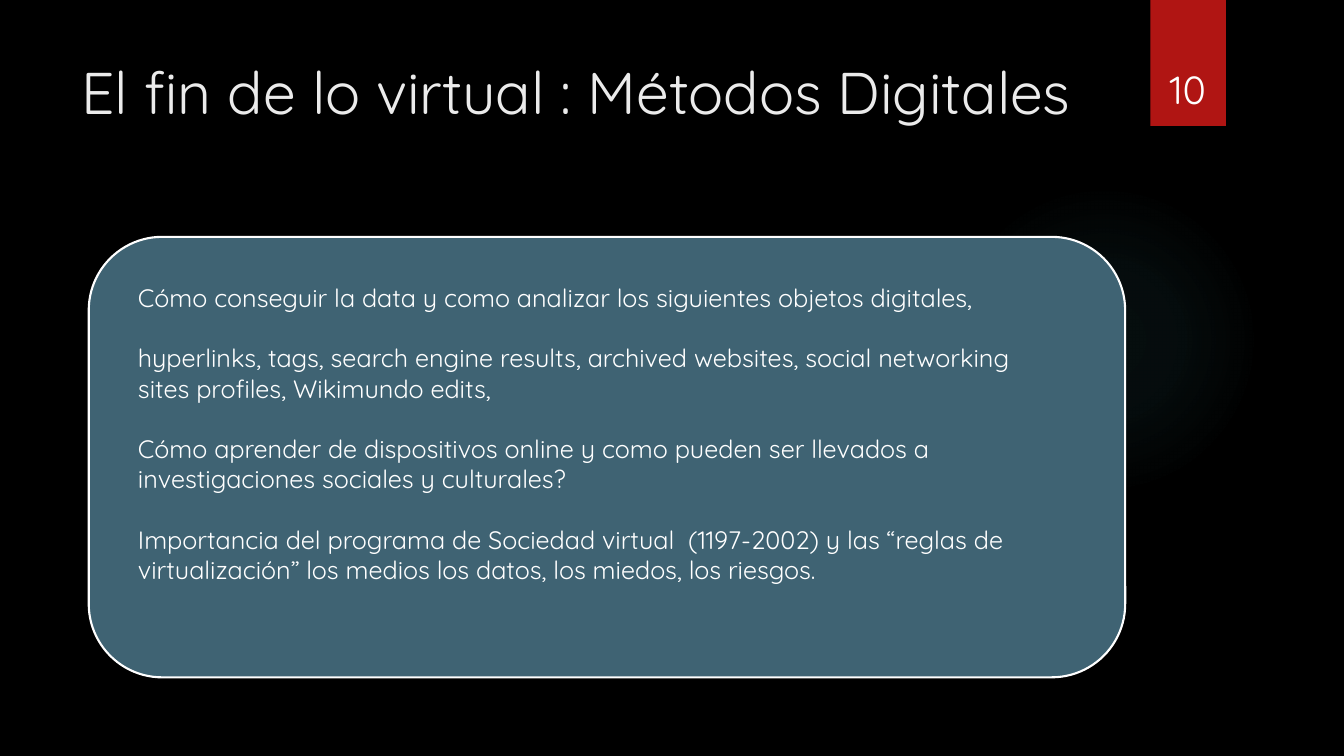
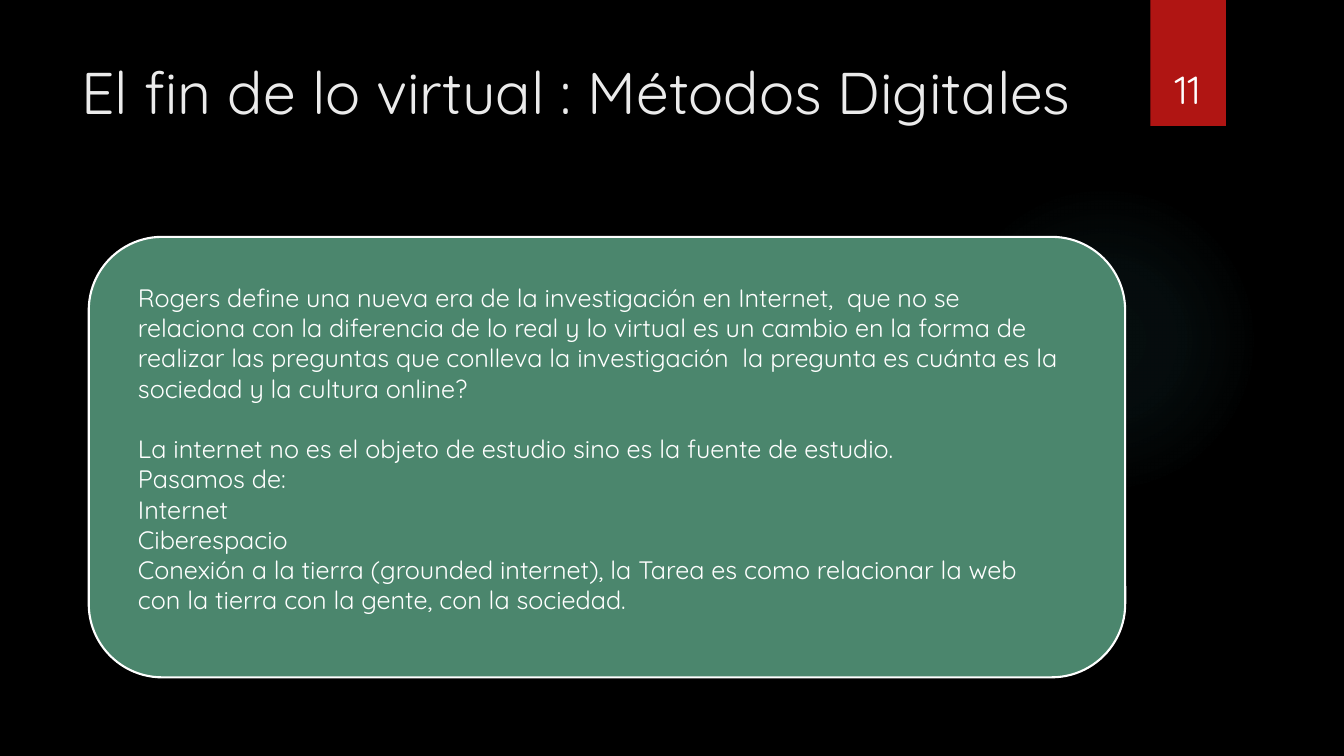
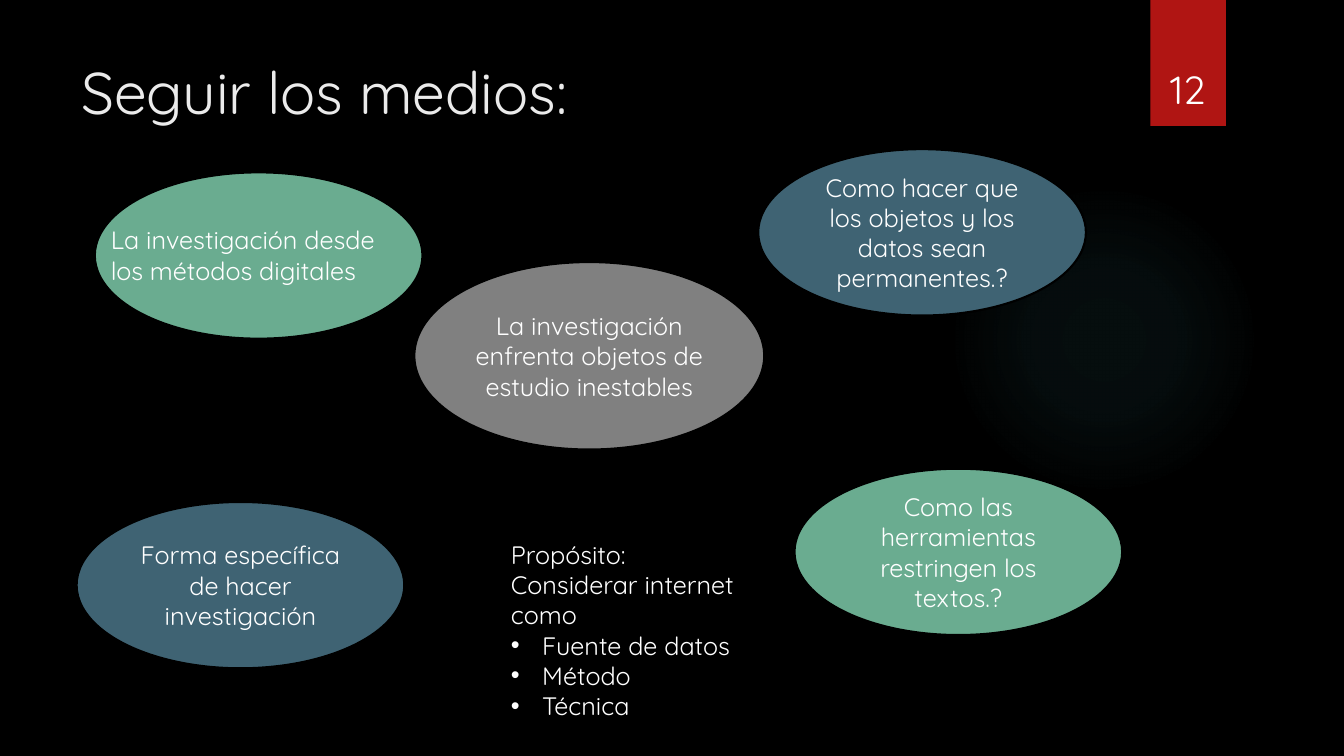
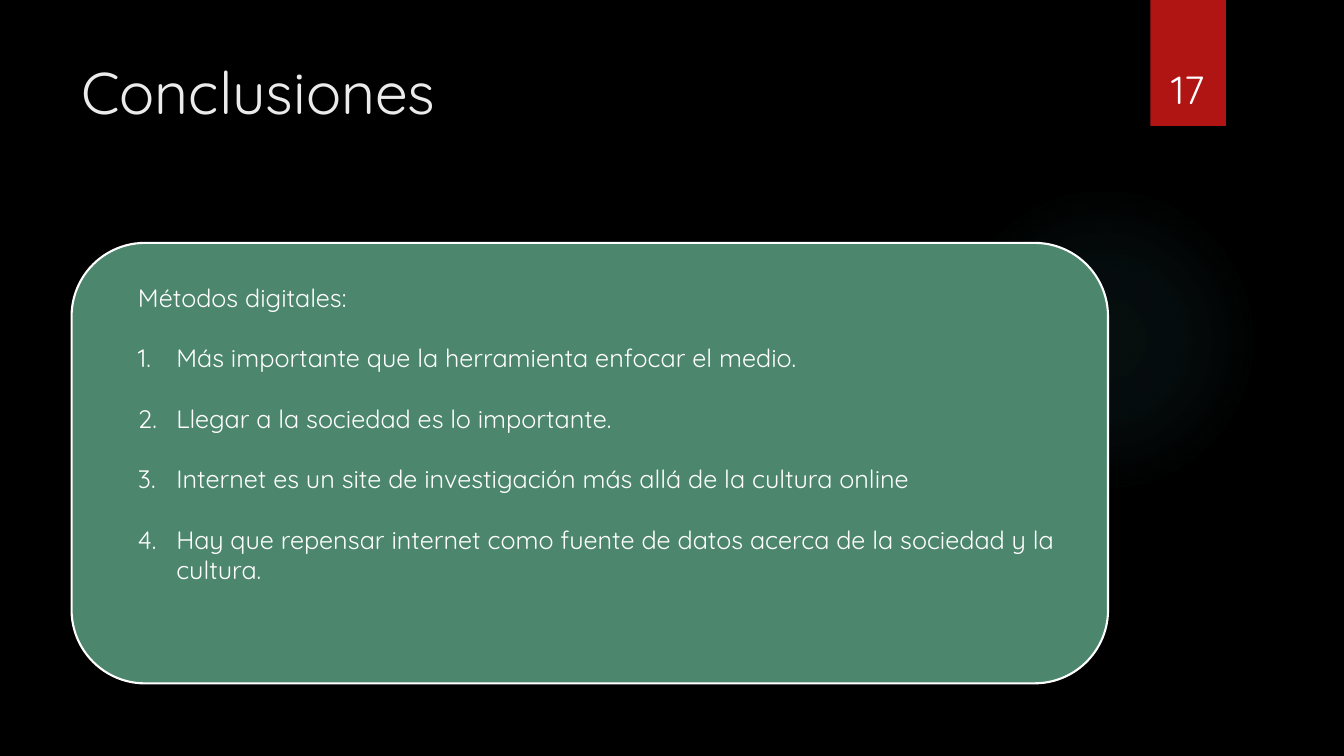
from dataclasses import dataclass

import lxml.etree
import pptx
import pptx.dml.color
import pptx.enum.shapes
import pptx.enum.text
import pptx.oxml
import pptx.oxml.ns
import pptx.util

Inches = pptx.util.Inches
Pt = pptx.util.Pt
SHAPE = pptx.enum.shapes.MSO_SHAPE
ALIGN = pptx.enum.text.PP_ALIGN
ANCHOR = pptx.enum.text.MSO_ANCHOR


@dataclass(frozen=True)
class Theme:
    font: str = "Quicksand"
    background: str = "000000"
    title: str = "EBEBEB"
    text: str = "FFFFFF"
    band: str = "B01513"
    glow: str = "50B9C1"
    blue: str = "3F6373"
    green: str = "4B866D"
    mint: str = "6AAC90"
    gray: str = "808080"
    title_size: float = 42
    number_size: float = 28
    body_size: float = 18
    outline_width: float = 1.5
    body_gap: float = 21.6
    glow_stops: tuple = ((0, 7), (36, 6), (69, 0))


THEME = Theme()


@dataclass(frozen=True)
class Paragraph:
    """Text with its space before in points, its marker and its hanging indent in inches."""
    text: str
    gap: float = 0
    marker: str = ""
    indent: float = 0


def spaced(text, marker="", indent=0):
    return Paragraph(text, THEME.body_gap, marker, indent)


def rgb(color):
    return pptx.dml.color.RGBColor.from_string(color)


def place(left, top, width, height):
    return [Inches(length) for length in (left, top, width, height)]


def set_marker(paragraph, marker, indent):
    """Hang the paragraph on a bullet character, or on a number if marker is "1."."""
    properties = paragraph._p.get_or_add_pPr()
    properties.set("marL", str(Inches(indent)))
    properties.set("indent", str(-Inches(indent)))
    qualified = pptx.oxml.ns.qn
    if marker == "1.":
        lxml.etree.SubElement(properties, qualified("a:buAutoNum"), type="arabicPeriod")
    else:
        lxml.etree.SubElement(properties, qualified("a:buFont"), typeface="Arial")
        lxml.etree.SubElement(properties, qualified("a:buChar"), char=marker)


def write_text(shape, *paragraphs, size=THEME.body_size, color=THEME.text,
               align=ALIGN.LEFT, anchor=ANCHOR.TOP):
    frame = shape.text_frame
    frame.word_wrap = True
    frame.vertical_anchor = anchor
    for index, content in enumerate(paragraphs):
        if isinstance(content, str):
            content = Paragraph(content)
        paragraph = frame.add_paragraph() if index else frame.paragraphs[0]
        paragraph.alignment = align
        if content.gap:
            paragraph.space_before = Pt(content.gap)
        if content.marker:
            set_marker(paragraph, content.marker, content.indent)
        run = paragraph.add_run()
        run.text = content.text
        run.font.name = THEME.font
        run.font.size = Pt(size)
        run.font.color.rgb = rgb(color)


def add_text(slide, box, *paragraphs, **text_format):
    write_text(slide.shapes.add_textbox(*place(*box)), *paragraphs, **text_format)


def add_filled_shape(slide, kind, box, fill, outline=None):
    shape = slide.shapes.add_shape(kind, *place(*box))
    shape.shadow.inherit = False
    shape.fill.solid()
    shape.fill.fore_color.rgb = rgb(fill)
    if outline:
        shape.line.color.rgb = rgb(outline)
        shape.line.width = Pt(THEME.outline_width)
    else:
        shape.line.fill.background()
    return shape


def add_glow(slide):
    """Add the faint round light, which fades out from its centre."""
    glow = add_filled_shape(slide, SHAPE.OVAL, (9.41, 1.83, 3.08, 3.08), THEME.glow)
    stops = "".join(
        f'<a:gs pos="{position * 1000}"><a:srgbClr val="{THEME.glow}">'
        f'<a:alpha val="{alpha * 1000}"/></a:srgbClr></a:gs>'
        for position, alpha in THEME.glow_stops)
    gradient = pptx.oxml.parse_xml(
        f'<a:gradFill {pptx.oxml.ns.nsdecls("a")} rotWithShape="1"><a:gsLst>{stops}</a:gsLst>'
        '<a:path path="circle"><a:fillToRect l="50000" t="50000" r="50000" b="50000"/>'
        '</a:path></a:gradFill>')
    properties = glow._element.spPr
    properties.replace(properties.find(pptx.oxml.ns.qn("a:solidFill")), gradient)


def add_slide(presentation, title, number):
    """Add a slide with the shared glow, title and numbered band."""
    slide = presentation.slides.add_slide(presentation.slide_layouts[6])
    add_glow(slide)
    add_filled_shape(slide, SHAPE.RECTANGLE, (11.41, 0, 0.75, 1.25), THEME.band)
    add_text(slide, (0.71, 0.5, 10.29, 1.53), title, size=THEME.title_size, color=THEME.title)
    add_text(slide, (11.32, 0.32, 0.92, 0.84), str(number), size=THEME.number_size,
             align=ALIGN.CENTER, anchor=ANCHOR.BOTTOM)
    return slide


def add_panel(slide, left, top, fill, *paragraphs):
    add_filled_shape(slide, SHAPE.ROUNDED_RECTANGLE, (left, top, 10.28, 4.37), fill, THEME.text)
    add_text(slide, (1.27, 2.75, 9.35, 3.74), *paragraphs)


def add_bubble(slide, left, top, fill, text="", width=3.25, height=1.65):
    bubble = add_filled_shape(slide, SHAPE.OVAL, (left, top, width, height), fill,
                              THEME.background)
    if text:
        write_text(bubble, text, align=ALIGN.CENTER, anchor=ANCHOR.MIDDLE)


def build_objects_slide(presentation):
    slide = add_slide(presentation, "El fin de lo virtual : Métodos Digitales", 10)
    add_panel(
        slide, 0.88, 2.35, THEME.blue,
        "Cómo conseguir la data y como analizar los siguientes objetos digitales,",
        spaced("hyperlinks, tags, search engine results, archived websites, "
               "social networking sites profiles, Wikimundo edits,"),
        spaced("Cómo aprender de dispositivos online y como pueden ser llevados a "
               "investigaciones sociales y culturales?"),
        spaced("Importancia del programa de Sociedad virtual  (1197-2002) y las “reglas de "
               "virtualización” los medios los datos, los miedos, los riesgos."))


def build_new_era_slide(presentation):
    slide = add_slide(presentation, "El fin de lo virtual : Métodos Digitales", 11)
    add_panel(
        slide, 0.88, 2.35, THEME.green,
        "Rogers define una nueva era de la investigación en Internet,  que no se relaciona "
        "con la diferencia de lo real y lo virtual es un cambio en la forma de realizar las "
        "preguntas que conlleva la investigación  la pregunta es cuánta es la sociedad y la "
        "cultura online?",
        spaced("La internet no es el objeto de estudio sino es la fuente de estudio."),
        "Pasamos de:",
        "Internet",
        "Ciberespacio",
        "Conexión a la tierra (grounded internet), la Tarea es como relacionar la web con la "
        "tierra con la gente, con la sociedad.")


def build_media_slide(presentation):
    slide = add_slide(presentation, "Seguir los medios:", 12)
    add_bubble(slide, 0.94, 1.71, THEME.mint)
    add_text(slide, (1, 2.18, 3.01, 0.71), "La investigación desde los métodos digitales")
    add_bubble(slide, 4.11, 2.6, THEME.gray,
               "La investigación enfrenta objetos de estudio inestables", 3.47, 1.86)
    for left, top, fill, text in (
        (7.52, 1.48, THEME.blue, "Como hacer que los objetos y los datos sean permanentes.?"),
        (0.76, 4.98, THEME.blue, "Forma específica de hacer investigación"),
        (7.88, 4.65, THEME.mint, "Como las herramientas restringen los textos.?"),
    ):
        add_bubble(slide, left, top, fill, text)
    uses = [Paragraph(text, marker="•", indent=0.31)
            for text in ("Fuente de datos", "Método", "Técnica")]
    add_text(slide, (4.97, 5.3, 2.73, 2.2), "Propósito:", "Considerar internet como", *uses)


def build_conclusions_slide(presentation):
    slide = add_slide(presentation, "Conclusiones", 17)
    conclusions = [spaced(text, marker="1.", indent=0.38) for text in (
        "Más importante que la herramienta enfocar el medio.",
        "Llegar a la sociedad es lo importante.",
        "Internet es un site de investigación más allá de la cultura online",
        "Hay que repensar internet como fuente de datos acerca de la sociedad y la cultura.",
    )]
    add_panel(slide, 0.71, 2.41, THEME.green, "Métodos digitales:", *conclusions)


def main():
    presentation = pptx.Presentation()
    presentation.slide_width = Inches(13.33)
    presentation.slide_height = Inches(7.5)
    background = presentation.slide_master.background.fill
    background.solid()
    background.fore_color.rgb = rgb(THEME.background)
    build_objects_slide(presentation)
    build_new_era_slide(presentation)
    build_media_slide(presentation)
    build_conclusions_slide(presentation)
    presentation.save("out.pptx")


if __name__ == "__main__":
    main()
